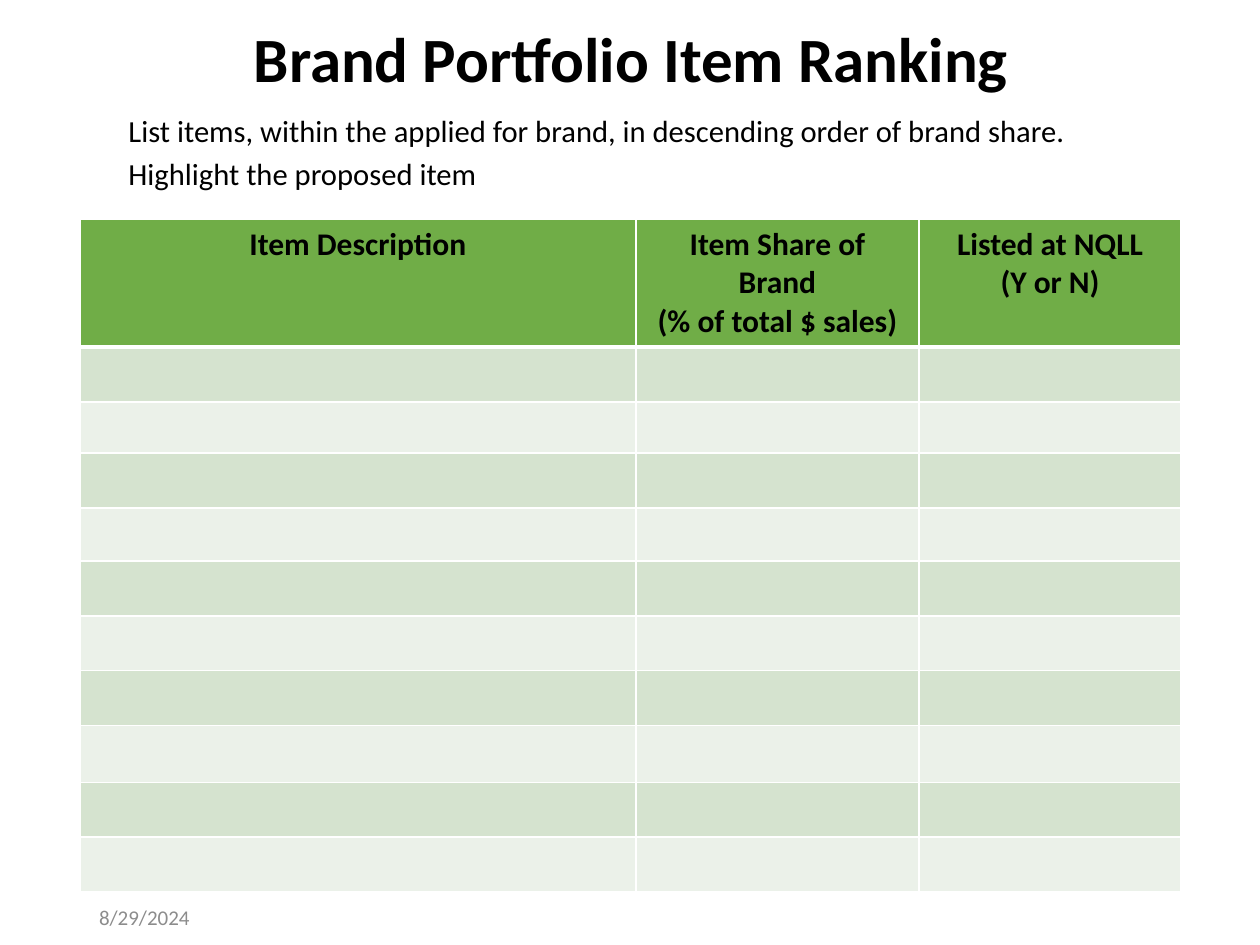
import pptx
import pptx.dml.color
import pptx.enum.text
import pptx.oxml
import pptx.oxml.ns
import pptx.util

Pt = pptx.util.Pt
ALIGN = pptx.enum.text.PP_ALIGN
ANCHOR = pptx.enum.text.MSO_ANCHOR


def color(value):
    return pptx.dml.color.RGBColor.from_string(value)


def write(frame, text, size=18, fill="000000", bold=False, align=ALIGN.LEFT,
          anchor=ANCHOR.TOP, line_spacing=1.0, space_before=0):
    """Fill a text frame, one paragraph for each line of text."""
    frame.word_wrap = True
    frame.vertical_anchor = anchor
    for index, line in enumerate(text.split("\n")):
        paragraph = frame.add_paragraph() if index else frame.paragraphs[0]
        paragraph.alignment = align
        paragraph.line_spacing = line_spacing
        paragraph.space_before = Pt(space_before)
        run = paragraph.add_run()
        run.text = line
        run.font.name = "Calibri"
        run.font.size = Pt(size)
        run.font.bold = bold
        run.font.color.rgb = color(fill)


presentation = pptx.Presentation()
presentation.slide_width = Pt(720)
presentation.slide_height = Pt(540)
slide = presentation.slides.add_slide(presentation.slide_layouts[1])

# Title and instructions
title = slide.shapes.title
title.left, title.top, title.width, title.height = Pt(36.7), Pt(11.5), Pt(648), Pt(48.2)
write(title.text_frame, "Brand Portfolio Item Ranking", size=36, bold=True,
      align=ALIGN.CENTER, anchor=ANCHOR.MIDDLE, line_spacing=0.9)

body = slide.placeholders[1]
body.left, body.top, body.width, body.height = Pt(66.2), Pt(66.2), Pt(609), Pt(48.2)
write(body.text_frame,
      "List items, within the applied for brand, in descending order of brand share.\n"
      "Highlight the proposed item",
      size=17.5, line_spacing=0.7, space_before=10)
for paragraph in body.text_frame.paragraphs:
    properties = paragraph._p.get_or_add_pPr()
    properties.set("marL", "0")
    properties.set("indent", "0")
    properties.append(pptx.oxml.parse_xml(f"<a:buNone {pptx.oxml.ns.nsdecls('a')}/>"))
for shape in (title, body):
    shape.text_frame.auto_size = pptx.enum.text.MSO_AUTO_SIZE.NONE

# Ranking table
headers = ["Item Description", "Item Share of Brand\n(% of total $ sales)",
           "Listed at NQLL\n(Y or N)"]
column_widths = [317.8, 161.8, 149.8]
row_heights = [73, 31.4, 29.2, 31.4, 30.2, 31.4, 31.4, 31.4, 32.4, 31.4, 31.4]
table = slide.shapes.add_table(
    len(row_heights), len(column_widths), Pt(45.6), Pt(125.2),
    Pt(sum(column_widths)), Pt(sum(row_heights))).table
for column, width in zip(table.columns, column_widths):
    column.width = Pt(width)

for row_index, (row, height) in enumerate(zip(table.rows, row_heights)):
    row.height = Pt(height)
    band = "D5E3CF" if row_index % 2 else "EBF1E9"
    border_widths = {"L": 1, "R": 1, "T": 3 if row_index == 1 else 1,
                     "B": 3 if row_index == 0 else 1}
    for cell in row.cells:
        for side, width in border_widths.items():
            cell._tc.get_or_add_tcPr().append(pptx.oxml.parse_xml(
                f'<a:ln{side} {pptx.oxml.ns.nsdecls("a")} w="{Pt(width)}"><a:solidFill>'
                f'<a:srgbClr val="FFFFFF"/></a:solidFill></a:ln{side}>'))
        cell.fill.solid()
        cell.fill.fore_color.rgb = color(band if row_index else "70AD47")

for cell, header in zip(table.rows[0].cells, headers):
    write(cell.text_frame, header, bold=True, align=ALIGN.CENTER)

# Date
date = slide.shapes.add_textbox(Pt(49.5), Pt(518.4), Pt(162), Pt(10.8))
write(date.text_frame, "8/29/2024", size=12, fill="8C8C8C", anchor=ANCHOR.MIDDLE)

presentation.save("out.pptx")
